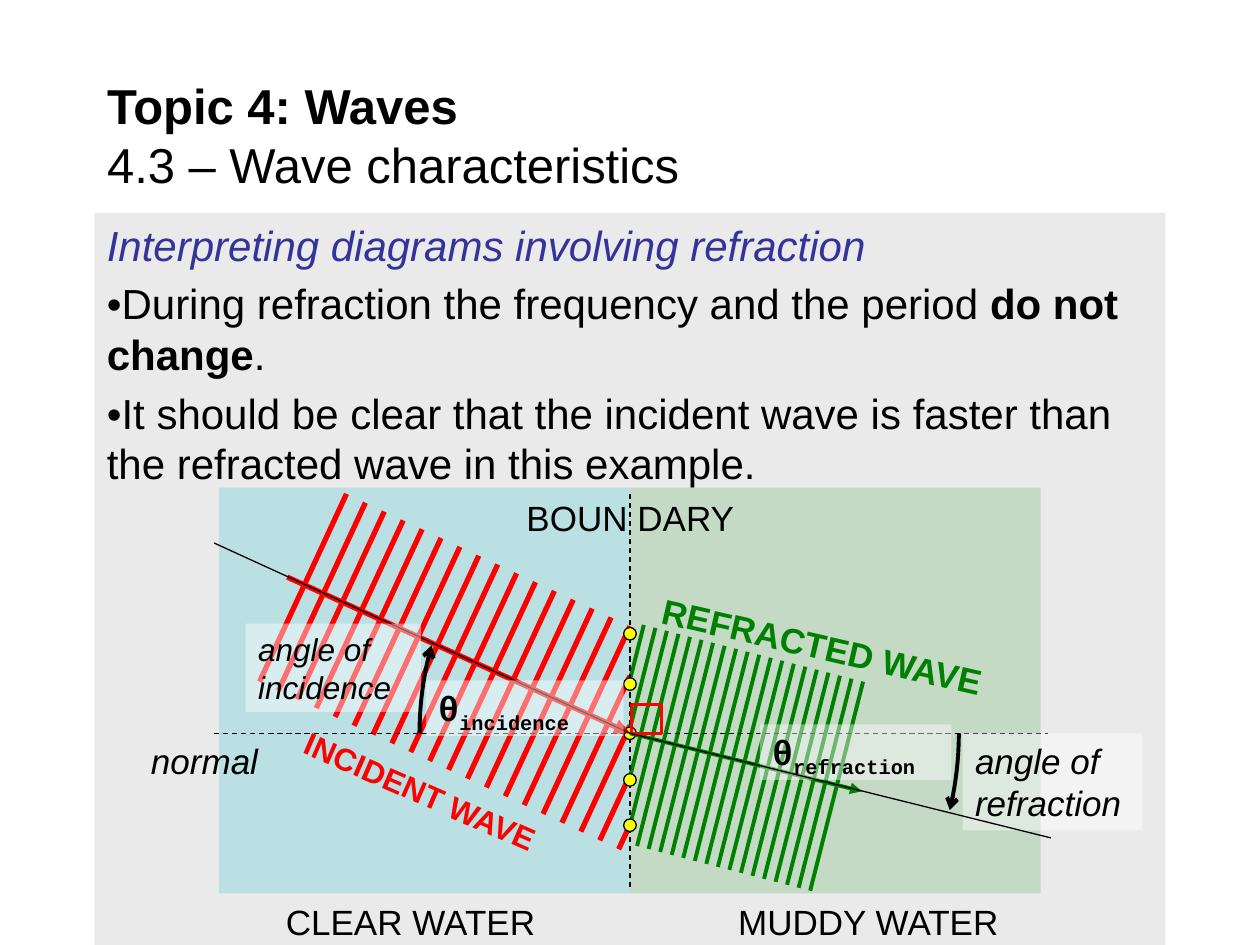
from math import cos, sin, radians
from lxml import etree
from pptx import Presentation
from pptx.dml.color import RGBColor
from pptx.enum.dml import MSO_LINE
from pptx.enum.shapes import MSO_CONNECTOR as CONN, MSO_SHAPE as SHAPE
from pptx.enum.text import MSO_ANCHOR as ANCHOR, MSO_AUTO_SIZE as AUTO, PP_ALIGN as ALIGN
from pptx.oxml.ns import qn
from pptx.util import Inches, Pt

COLS, ROWS = 10, 7.5
BLACK, WHITE, RED, GREEN = "000000", "FFFFFF", "FF0000", "008000"


def rgb(value):
    return RGBColor.from_string(value)


class Board:
    cell = Inches(1)
    font = "Arial"

    def __init__(self, prs):
        prs.slide_width, prs.slide_height = self.grid(COLS, ROWS)
        self.slide = prs.slides.add_slide(prs.slide_layouts[5])
        self.shapes = self.slide.shapes

    def grid(self, *cells):
        return [round(c * self.cell) for c in cells]

    def add_text(self, sp, paragraphs, wrap=True, anchor=ANCHOR.TOP, before=0, **base):
        tf = sp.text_frame
        for key, value in dict(word_wrap=wrap, auto_size=AUTO.NONE, vertical_anchor=anchor).items():
            setattr(tf, key, value)
        for i, runs in enumerate(paragraphs):
            p = tf.add_paragraph() if i else tf.paragraphs[0]
            p.alignment = ALIGN.LEFT
            p.space_before = Pt(before)
            for text, extra in runs:
                if text == "\n":
                    p.add_line_break()
                    continue
                style = {"name": self.font, "color": BLACK, **base, **extra}
                r = p.add_run()
                r.text = text
                r.font.color.rgb = rgb(style.pop("color"))
                r.font.size = Pt(style.pop("size"))
                if style.pop("sub", False):
                    r.font._element.set("baseline", "-25000")
                for key, value in style.items():
                    setattr(r.font, key, value)

    def title(self, at, paragraphs, **style):
        sp = self.shapes.title
        sp.left, sp.top, sp.width, sp.height = self.grid(*at)
        self.add_text(sp, paragraphs, anchor=ANCHOR.MIDDLE, **style)

    def label(self, at, text, rotation=0, **style):
        sp = self.shapes.add_textbox(*self.grid(*at))
        sp.rotation = rotation
        self.add_text(sp, [[(text, {})]], **style)

    def block(self, at, fill=None, line=None, width=0.75, kind=SHAPE.RECTANGLE, alpha=None):
        sp = self.shapes.add_shape(kind, *self.grid(*at))
        sp.shadow.inherit = False
        if fill:
            sp.fill.solid()
            sp.fill.fore_color.rgb = rgb(fill)
        else:
            sp.fill.background()
        if alpha:
            color = sp._element.spPr.find(qn("a:solidFill"))[0]
            etree.SubElement(color, qn("a:alpha"), val=str(alpha * 1000))
        if line:
            self.stroke(sp, line, width)
        else:
            sp.line.fill.background()
        return sp

    def note(self, at, runs, **style):
        self.add_text(self.block(at, WHITE, alpha=43), [runs], **style)

    def stroke(self, sp, color, width, dash=False, arrow=None):
        sp.line.color.rgb = rgb(color)
        sp.line.width = Pt(width)
        if dash:
            sp.line.dash_style = MSO_LINE.DASH
        if arrow:
            etree.SubElement(sp._element.spPr.get_or_add_ln(), qn("a:tailEnd"), type=arrow)

    def line(self, start, end, color=BLACK, width=0.75, **style):
        sp = self.shapes.add_connector(CONN.STRAIGHT, *self.grid(*start, *end))
        self.stroke(sp, color, width, **style)
        etree.SubElement(sp._element.spPr, qn("a:effectLst"))

    def arc(self, center, radius, start, sweep, steps=16):
        angles = [radians(start + sweep * i / steps) for i in range(steps + 1)]
        points = [self.grid(center[0] + radius * cos(a), center[1] + radius * sin(a)) for a in angles]
        builder = self.shapes.build_freeform(*points[0])
        builder.add_line_segments(points[1:], close=False)
        sp = builder.convert_to_shape()
        sp.shadow.inherit = False
        sp.fill.background()
        self.stroke(sp, BLACK, 2.25, arrow="arrow")

    def wavefronts(self, first, step, span, count, edge, incident, color, width):
        for i in range(count):
            x, y = first[0] + i * step[0], first[1] + i * step[1]
            cut = (edge - x) / span[0]
            ends = (max(0, cut), 1) if incident else (0, min(1, cut))
            start, end = [(x + t * span[0], y + t * span[1]) for t in ends]
            self.line(start, end, color, width)


def main():
    prs = Presentation()
    b = Board(prs)
    edge, normal = 5, 5.82

    body = b.block((0.75, 1.69, 8.5, 5.81), "EAEAEA")
    b.add_text(body, [
        [("Interpreting diagrams involving refraction", {"color": "333399", "italic": True})],
        [("•During refraction the frequency and the period ", {}), ("do not change", {"bold": True}), (".", {})],
        [("•It should be clear that the incident wave is faster than the refracted wave in this example.", {})],
    ], size=24, before=4.8)
    b.title((0.75, 0.58, 8.5, 0.98), [[("Topic 4: Waves", {"bold": True}), ("\n", {}),
                                       ("4.3 – Wave characteristics", {"bold": False})]], size=28)

    for left, fill in ((edge, "C4DAC5"), (edge - 3.26, "BBE0E3")):
        b.block((left, 3.87, 3.26, 3.22), fill)
    b.wavefronts((2.75, 3.92), (0.15, 0.07), (-0.69, 1.49), 20, edge, True, RED, 3)
    b.wavefronts((5.11, 4.96), (1.74 / 19, 0.45 / 19), (-0.42, 1.66), 20, edge, False, GREEN, 2.25)
    b.line((edge, 3.92), (edge, 7.06), dash=True)

    b.label((2.17, 7.1, 2.21, 0.43), "CLEAR WATER", size=20, wrap=False)
    b.label((5.76, 7.1, 2.3, 0.43), "MUDDY WATER", size=20, wrap=False)
    b.label((4.08, 3.89, 1.87, 0.43), "BOUN DARY", size=20)
    for top in (4.98, 5.38, 5.77, 6.14, 6.5):
        b.block((edge - 0.05, top, 0.1, 0.1), "FFFF00", BLACK, kind=SHAPE.OVAL)
    b.label((2.24, 6.14, 2.46, 0.4), "INCIDENT WAVE", 23.7, size=18, color=RED, bold=True)
    b.label((5.13, 4.92, 2.87, 0.43), "REFRACTED WAVE", 12.9, size=20, color=GREEN, bold=True)

    b.line((2.28, 4.58), (edge, normal), RED, 3, arrow="triangle")
    b.line((edge, normal), (6.84, 6.28), GREEN, 2.25, arrow="triangle")
    b.line((1.7, normal), (8.32, normal), dash=True)
    b.block((5.01, 5.59, 0.24, 0.23), line=RED, width=1.5)
    b.label((1.1, normal, 1.16, 0.43), "normal", size=20, italic=True)
    b.line((edge, normal), (1.7, 4.31))

    angles = (("incidence", (3.38, 5.4, 1.57, 0.44), (1.95, 4.95, 1.39, 0.7), 18),
              ("refraction", (6.03, 5.75, 1.52, 0.44), (7.64, normal, 1.43, 0.77), 20))
    for name, symbol_at, name_at, size in angles:
        b.note(symbol_at, [("θ", {}), (name, {"sub": True})], size=20, name="Courier New", bold=True)
        b.note(name_at, [(f"angle of {name}", {})], size=size, italic=True)
    b.line((8.34, 6.65), (edge, normal))
    b.arc((edge, normal), 2.61, 0, 13.5)
    b.arc((5.94, normal), 2.61, 180, 15.5)
    prs.save("out.pptx")


if __name__ == "__main__":
    main()
